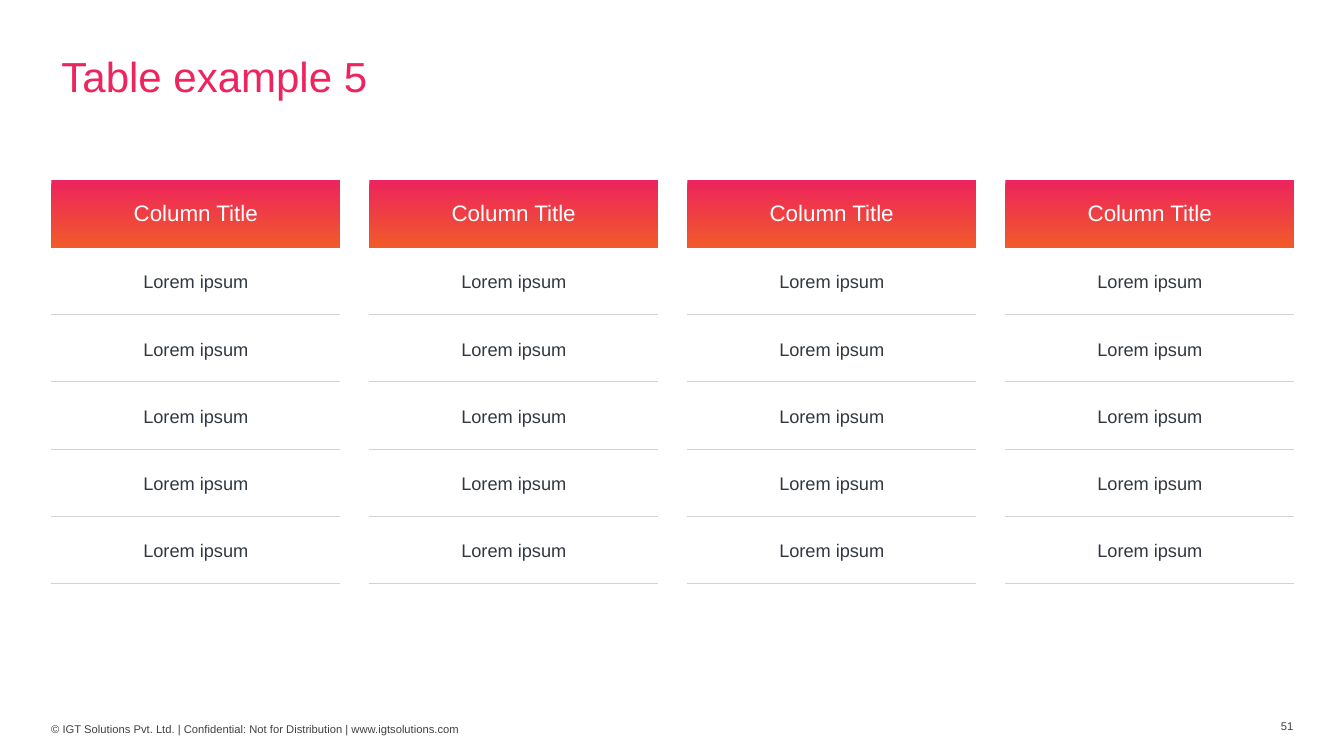
from lxml import etree
from pptx import Presentation
from pptx.dml.color import RGBColor
from pptx.enum.text import MSO_ANCHOR, PP_ALIGN
from pptx.oxml.ns import qn
from pptx.util import Pt

TOP, MIDDLE = MSO_ANCHOR.TOP, MSO_ANCHOR.MIDDLE
LEFT, CENTER = PP_ALIGN.LEFT, PP_ALIGN.CENTER
PINK, ORANGE, WHITE = "ED245D", "F15A29", "FFFFFF"
INK, GRAY, RULE = "32383F", "414042", "D2D2D2"


def style(para, size, color, align=LEFT):
    para.alignment = align
    para.font.name = "Arial"
    para.font.size = Pt(size)
    para.font.color.rgb = RGBColor.from_string(color)


def border(cell, sides):
    props = cell._tc.get_or_add_tcPr()
    for side in "LRTB":
        line = etree.SubElement(props, qn("a:ln" + side), w=str(Pt(0.75)))
        if side in sides:
            fill = etree.SubElement(line, qn("a:solidFill"))
            etree.SubElement(fill, qn("a:srgbClr"), val=RULE)
        else:
            etree.SubElement(line, qn("a:noFill"))


deck = Presentation()
deck.slide_width, deck.slide_height = Pt(960), Pt(540)
slide = deck.slides.add_slide(deck.slide_layouts[5])

# Title
title = slide.shapes.title
title.left, title.top, title.width, title.height = Pt(36.7), Pt(36.7), Pt(887), Pt(54.7)
title.text_frame.text = "Table example 5"
title.text_frame.vertical_anchor = TOP
head = title.text_frame.paragraphs[0]
head.line_spacing = 0.9
style(head, 30, PINK)

# Four single-column tables
labels = ["Column Title"] + ["Lorem ipsum"] * 5
wide, high, step = 206.2, 48, 227.15
for col in range(4):
    frame = slide.shapes.add_table(len(labels), 1, Pt(36.7 + col * step), Pt(128.8),
                                   Pt(wide), Pt(high * len(labels)))
    table = frame.table
    table.horz_banding = False
    for row, label in enumerate(labels):
        cell = table.cell(row, 0)
        cell.text = label
        cell.vertical_anchor = MIDDLE
        cell.margin_left = cell.margin_right = Pt(19.2)
        cell.margin_top = cell.margin_bottom = Pt(5)
        para = cell.text_frame.paragraphs[0]
        if row == 0:
            border(cell, "")
            cell.fill.gradient()
            cell.fill.gradient_angle = 270
            for stop, color in zip(cell.fill.gradient_stops, (PINK, ORANGE)):
                stop.color.rgb = RGBColor.from_string(color)
            style(para, 16, WHITE, CENTER)
            para.font.bold = False
        else:
            border(cell, "B" if row == 1 else "TB")
            cell.fill.solid()
            cell.fill.fore_color.rgb = RGBColor.from_string(WHITE)
            para.line_spacing = 1.15
            style(para, 13, INK, CENTER)

# Footer and page number
notes = [
    (29.5, 512.6, 766, "© IGT Solutions Pvt. Ltd. | Confidential: Not for Distribution | www.igtsolutions.com"),
    (907.9, 510.5, 31.7, "51"),
]
for left, top, width, text in notes:
    box = slide.shapes.add_textbox(Pt(left), Pt(top), Pt(width), Pt(28.8))
    box.text_frame.word_wrap = True
    box.text_frame.text = text
    style(box.text_frame.paragraphs[0], 8, GRAY)

deck.save("out.pptx")
